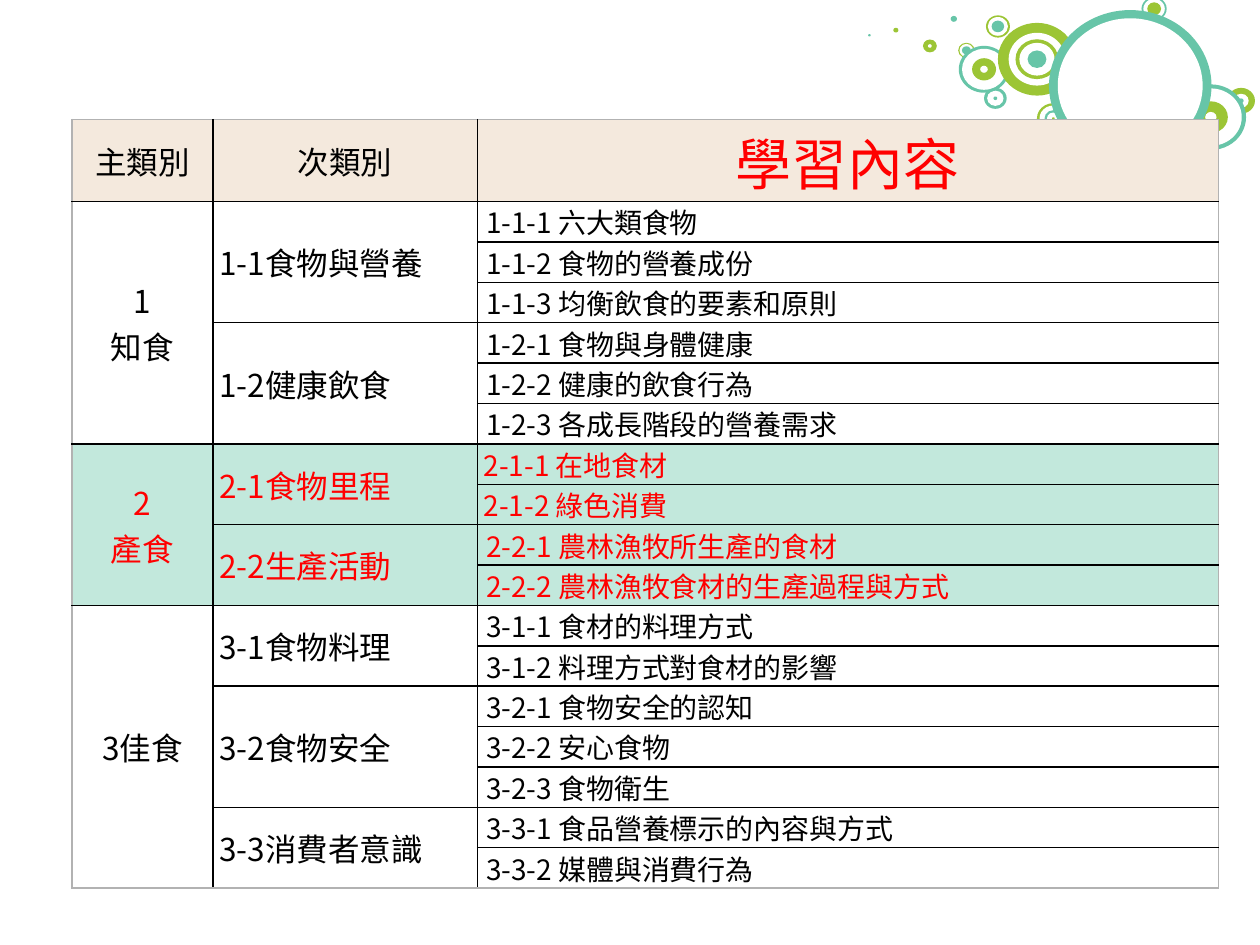
"""Build the food education learning content table slide."""
from lxml import etree
from pptx import Presentation
from pptx.dml.color import RGBColor
from pptx.enum import shapes, text
from pptx.oxml import ns
from pptx.util import Inches, Pt

FONT = "Noto Sans CJK SC"
GREEN, TEAL, WHITE = "9CC535", "67C5A8", "FFFFFF"
BLACK, RED, GREY = "000000", "FF0000", "B2B2B2"
CREAM, MINT = "F4E9DD", "C2E8DC"
ROUNDNESS = 0.93

RINGS = [
    (9.16, 0.07, [(0.2, TEAL), (0.17, WHITE), (0.11, GREEN)]),
    (7.38, 0.365, [(0.11, GREEN), (0.03, WHITE)]),
    (7.57, 0.15, [(0.05, TEAL)]),
    (7.11, 0.24, [(0.04, GREEN)]),
    (6.9, 0.28, [(0.02, TEAL)]),
    (7.67, 0.4, [(0.13, GREEN), (0.11, WHITE), (0.07, TEAL)]),
    (7.9, 0.78, [(0.18, TEAL), (0.13, WHITE), (0.03, TEAL)]),
    (7.81, 0.55, [(0.4, TEAL), (0.35, WHITE), (0.19, GREEN), (0.06, WHITE)]),
    (9.85, 0.8, [(0.22, GREEN), (0.12, WHITE), (0.04, TEAL)]),
    (9.61, 0.93, [(0.56, TEAL), (0.49, WHITE), (0.27, GREEN), (0.09, WHITE)]),
    (8.36, 0.94, [(0.26, GREEN), (0.22, WHITE), (0.14, TEAL), (0.1, WHITE), (0.02, GREEN)]),
    (8.23, 0.47, [(0.62, GREEN), (0.45, WHITE), (0.34, GREEN), (0.28, WHITE), (0.15, TEAL)]),
    (7.92, 0.21, [(0.19, GREEN), (0.16, WHITE), (0.1, TEAL)]),
    (8.97, 0.68, [(1.29, TEAL), (1.15, WHITE)]),
]

HEADERS = [("主類別", 18, BLACK), ("次類別", 18, BLACK), ("學習內容", 32, RED)]
CATEGORIES = [
    ("1\n知食", BLACK, None, [
        ("1-1食物與營養", ["1-1-1 六大類食物", "1-1-2 食物的營養成份", "1-1-3 均衡飲食的要素和原則"]),
        ("1-2健康飲食", ["1-2-1 食物與身體健康", "1-2-2 健康的飲食行為", "1-2-3 各成長階段的營養需求"]),
    ]),
    ("2\n產食", RED, MINT, [
        ("2-1食物里程", ["2-1-1 在地食材", "2-1-2 綠色消費"]),
        ("2-2生產活動", ["2-2-1 農林漁牧所生產的食材", "2-2-2 農林漁牧食材的生產過程與方式"]),
    ]),
    ("3佳食", BLACK, None, [
        ("3-1食物料理", ["3-1-1 食材的料理方式", "3-1-2 料理方式對食材的影響"]),
        ("3-2食物安全", ["3-2-1 食物安全的認知", "3-2-2 安心食物", "3-2-3 食物衛生"]),
        ("3-3消費者意識", ["3-3-1 食品營養標示的內容與方式", "3-3-2 媒體與消費行為"]),
    ]),
]
TIGHT_TOPICS = ("2-1-1", "2-1-2")
COL_WIDTHS = [1.12, 2.1, 5.88]
HEADER_HEIGHT, ROW_HEIGHT = 0.65, 0.32


def rgb(color):
    return RGBColor.from_string(color)


def add_rings(s, cx, cy, discs):
    for width, color in discs:
        height = width * ROUNDNESS
        sp = s.shapes.add_shape(
            shapes.MSO_SHAPE.OVAL, Inches(cx - width / 2), Inches(cy - height / 2),
            Inches(width), Inches(height))
        sp.shadow.inherit = False
        sp.fill.solid()
        sp.fill.fore_color.rgb = rgb(color)
        sp.line.fill.background()


def write_cell(cell, value, size, color, align=text.PP_ALIGN.LEFT, inset=0.05):
    cell.margin_left = cell.margin_right = Inches(inset)
    cell.margin_top = cell.margin_bottom = 0
    cell.vertical_anchor = text.MSO_ANCHOR.MIDDLE
    tf = cell.text_frame
    tf.text = value
    for p in tf.paragraphs:
        p.alignment = align
        for r in p.runs:
            r.font.size, r.font.name = Pt(size), FONT
            r.font.color.rgb = rgb(color)
            etree.SubElement(r.font._element, ns.qn("a:ea"), typeface=FONT)


def style_cell(cell, fill, outer):
    tc_pr = cell._tc.get_or_add_tcPr()
    for side in "LRTB":
        ln = etree.SubElement(tc_pr, ns.qn(f"a:ln{side}"), w=str(Pt(1)))
        solid = etree.SubElement(ln, ns.qn("a:solidFill"))
        color = GREY if side in outer else BLACK
        etree.SubElement(solid, ns.qn("a:srgbClr"), val=color)
    if fill:
        cell.fill.solid()
        cell.fill.fore_color.rgb = rgb(fill)
    else:
        cell.fill.background()


def add_content_table(s):
    center = text.PP_ALIGN.CENTER
    count = 1 + sum(len(topics) for *_, groups in CATEGORIES for _, topics in groups)
    heights = [HEADER_HEIGHT] + [ROW_HEIGHT] * (count - 1)
    table = s.shapes.add_table(
        count, len(COL_WIDTHS), Inches(0.57), Inches(0.95),
        Inches(sum(COL_WIDTHS)), Inches(sum(heights))).table
    table.first_row = table.horz_banding = False
    for column, width in zip(table.columns, COL_WIDTHS):
        column.width = Inches(width)
    for row, height in zip(table.rows, heights):
        row.height = Inches(height)

    for col, (label, size, color) in enumerate(HEADERS):
        write_cell(table.cell(0, col), label, size, color, center)
    fills = [CREAM]
    row = 1
    for category, color, fill, groups in CATEGORIES:
        first = row
        write_cell(table.cell(first, 0), category, 18, color, center)
        for group, topics in groups:
            write_cell(table.cell(row, 1), group, 18, color)
            table.cell(row, 1).merge(table.cell(row + len(topics) - 1, 1))
            for topic in topics:
                inset = 0.05 if topic.startswith(TIGHT_TOPICS) else 0.07
                write_cell(table.cell(row, 2), topic, 16, color, inset=inset)
                fills.append(fill)
                row += 1
        table.cell(first, 0).merge(table.cell(row - 1, 0))

    for row, fill in enumerate(fills):
        for col in range(len(COL_WIDTHS)):
            cell = table.cell(row, col)
            bottom = row + (cell.span_height if cell.is_merge_origin else 1)
            edges = {"L": col == 0, "R": col == len(COL_WIDTHS) - 1,
                     "T": row == 0, "B": bottom == count}
            style_cell(cell, fill, [side for side, on in edges.items() if on])


def main():
    prs = Presentation()
    prs.slide_width, prs.slide_height = Inches(10), Inches(7.5)
    s = prs.slides.add_slide(prs.slide_layouts[6])
    for ring in RINGS:
        add_rings(s, *ring)
    add_content_table(s)
    prs.save("out.pptx")


if __name__ == "__main__":
    main()
